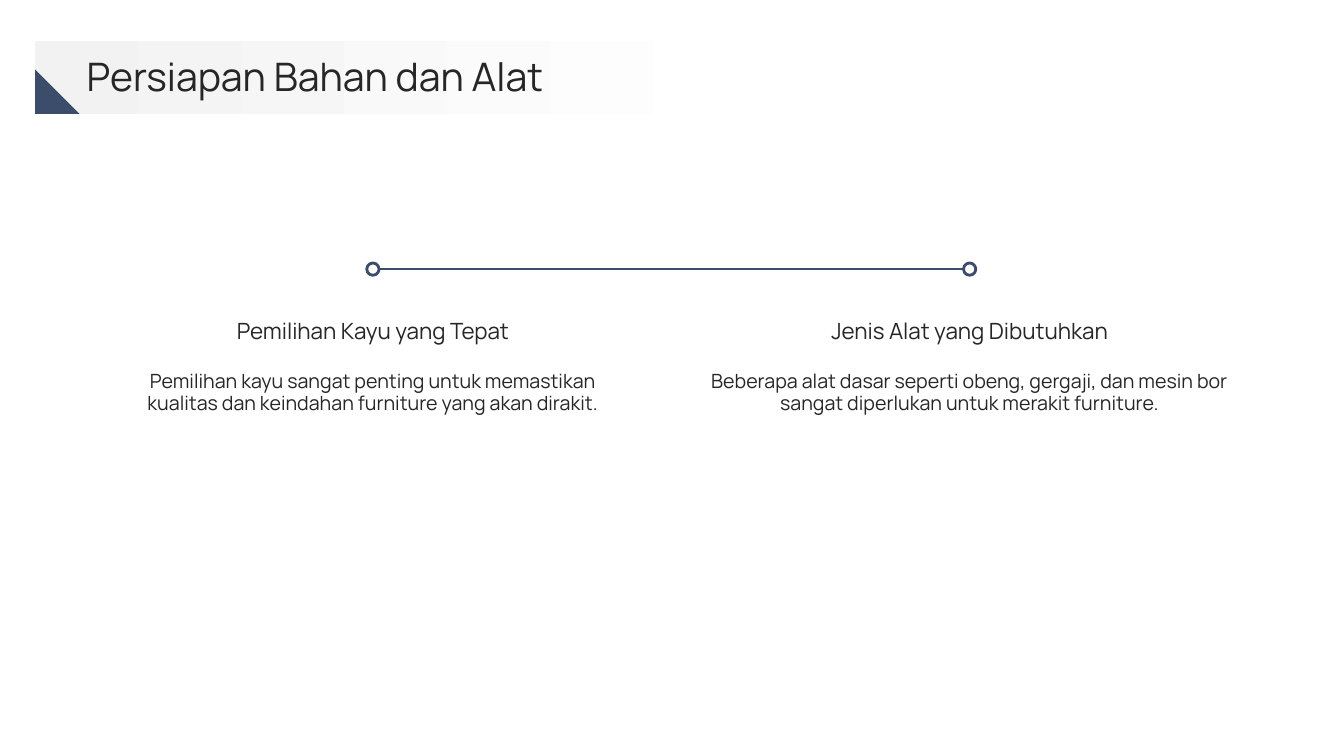
from dataclasses import dataclass

from lxml import etree
from pptx import Presentation
from pptx.dml.color import RGBColor
from pptx.enum import shapes, text
from pptx.oxml import ns
from pptx.util import Pt


@dataclass(frozen=True)
class Theme:
    """Colours, font and type sizes of the slide."""
    font: str = "Manrope"
    ink: RGBColor = RGBColor(0x26, 0x26, 0x26)
    accent: RGBColor = RGBColor(0x3C, 0x4C, 0x6B)
    paper: RGBColor = RGBColor(0xFF, 0xFF, 0xFF)
    band: RGBColor = RGBColor(0xF2, 0xF2, 0xF2)
    title_size: int = 28
    heading_size: int = 16
    body_size: int = 14


THEME = Theme()
COLUMN_LEFT, COLUMN_STEP, COLUMN_WIDTH = 80.64, 426.24, 371.52
TIMELINE_Y = 192.24
MARKER_SIZE = 8.8
TOPICS = [
    ("Pemilihan Kayu yang Tepat",
     "Pemilihan kayu sangat penting untuk memastikan kualitas dan keindahan "
     "furniture yang akan dirakit."),
    ("Jenis Alat yang Dibutuhkan",
     "Beberapa alat dasar seperti obeng, gergaji, dan mesin bor sangat "
     "diperlukan untuk merakit furniture."),
]


def write_text(shape, content, box, *, size, align="CENTER", anchor="MIDDLE"):
    """Place a placeholder and fill it with one formatted, unbulleted paragraph."""
    shape.left, shape.top, shape.width, shape.height = map(Pt, box)
    frame = shape.text_frame
    frame.word_wrap = True
    frame.auto_size = text.MSO_AUTO_SIZE.NONE
    frame.vertical_anchor = text.MSO_ANCHOR[anchor]
    frame.margin_left = frame.margin_top = frame.margin_right = frame.margin_bottom = 0
    paragraph = frame.paragraphs[0]
    paragraph.alignment = text.PP_ALIGN[align]
    paragraph.line_spacing = 0.9
    paragraph.space_before = paragraph.space_after = Pt(0)
    properties = paragraph._p.get_or_add_pPr()
    properties.set("marL", "0")
    properties.set("indent", "0")
    etree.SubElement(properties, ns.qn("a:buNone"))
    run = paragraph.add_run()
    run.text = content
    run.font.name = THEME.font
    run.font.size = Pt(size)
    run.font.bold = False
    run.font.color.rgb = THEME.ink


def add_shape(slide, kind, box, fill=None, line=None):
    """Add a shadowless preset shape with an optional fill and outline."""
    shape = slide.shapes.add_shape(shapes.MSO_SHAPE[kind], *map(Pt, box))
    shape.shadow.inherit = False
    if fill is not None:
        shape.fill.solid()
        shape.fill.fore_color.rgb = fill
    if line is None:
        shape.line.fill.background()
    else:
        shape.line.color.rgb = line
        shape.line.width = Pt(2)
    return shape


def add_title_band(slide):
    """Add the fading band and corner triangle, with the title between them."""
    band = add_shape(slide, "RECTANGLE", (25.2, 29.52, 643.68, 51.84))
    band.fill.gradient()
    band.fill.gradient_angle = 0
    fade = ((0, THEME.band), (0.8, THEME.paper))
    for stop, (position, colour) in zip(band.fill.gradient_stops, fade):
        stop.position = position
        stop.color.rgb = colour
    title = slide.shapes.title
    band._element.addnext(title._element)
    write_text(title, "Persiapan Bahan dan Alat", (61.92, 38.16, 840.24, 36.72),
               size=THEME.title_size, align="LEFT")
    add_shape(slide, "RIGHT_TRIANGLE", (25.2, 49.68, 31.68, 31.68), THEME.accent)


def add_timeline(slide, centres):
    """Join the column centres with a line and mark each with a ring."""
    line = slide.shapes.add_connector(
        shapes.MSO_CONNECTOR.STRAIGHT, Pt(centres[0]), Pt(TIMELINE_Y),
        Pt(centres[-1]), Pt(TIMELINE_Y))
    line.line.color.rgb = THEME.accent
    line.line.width = Pt(1)
    etree.SubElement(line._element.spPr, ns.qn("a:effectLst"))
    for centre in centres:
        box = (centre - MARKER_SIZE / 2, TIMELINE_Y - MARKER_SIZE / 2,
               MARKER_SIZE, MARKER_SIZE)
        add_shape(slide, "OVAL", box, THEME.paper, THEME.accent)


def add_topic(heading_holder, body_holder, left, heading, body):
    """Write one column: a heading above its description."""
    write_text(heading_holder, heading, (left, 208.8, COLUMN_WIDTH, 56.88),
               size=THEME.heading_size)
    write_text(body_holder, body, (left, 265.68, COLUMN_WIDTH, 118.08),
               size=THEME.body_size, anchor="TOP")


def main():
    """Build the slide and save it."""
    presentation = Presentation()
    presentation.slide_width, presentation.slide_height = Pt(960), Pt(540)
    layout = presentation.slide_layouts.get_by_name("Comparison")
    slide = presentation.slides.add_slide(layout)
    holders = list(slide.placeholders)[1:]
    lefts = [COLUMN_LEFT + COLUMN_STEP * index for index in range(len(TOPICS))]
    add_timeline(slide, [left + COLUMN_WIDTH / 2 for left in lefts])
    for heading_holder, body_holder, left, topic in zip(
            holders[::2], holders[1::2], lefts, TOPICS):
        add_topic(heading_holder, body_holder, left, *topic)
    add_title_band(slide)
    presentation.save("out.pptx")


if __name__ == "__main__":
    main()
